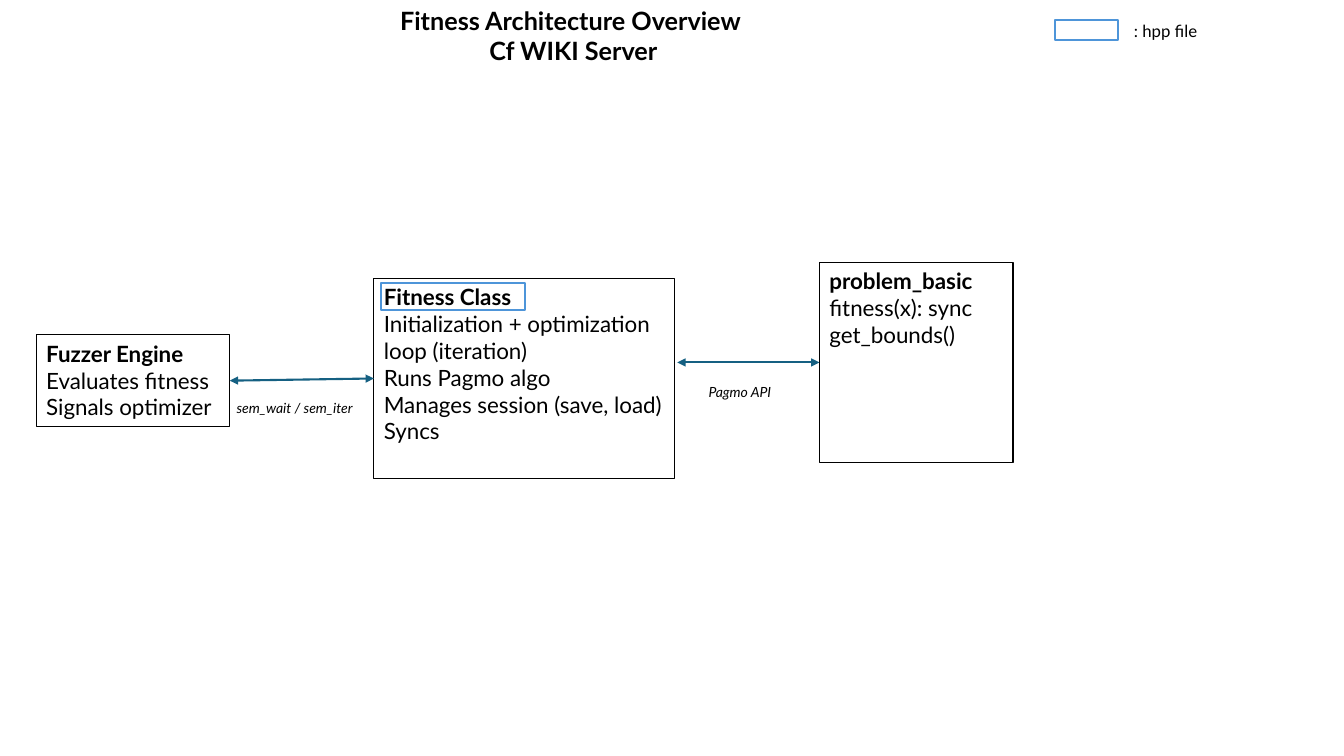
"""Draw the fitness architecture overview slide."""
import dataclasses
from typing import Optional

import lxml.etree
import pptx
import pptx.dml.color
import pptx.enum.shapes
import pptx.enum.text
import pptx.oxml.ns
import pptx.shapes.autoshape
import pptx.shapes.connector
import pptx.slide
import pptx.text.text
import pptx.util

Pt = pptx.util.Pt
ALIGN = pptx.enum.text.PP_ALIGN
BLACK, BLUE, TEAL = "000000", "4E95D9", "156082"
HEADING = {"size": Pt(16), "bold": True}
BODY = {"size": Pt(16), "bold": False}
TITLE = {"size": Pt(18), "bold": True}
CAPTION = {"size": Pt(10), "italic": True}
LEGEND = {"size": Pt(12)}
FRAME = {
    "word_wrap": True,
    "auto_size": pptx.enum.text.MSO_AUTO_SIZE.NONE,
    "vertical_anchor": pptx.enum.text.MSO_ANCHOR.TOP,
    "margin_left": Pt(7.2),
    "margin_right": Pt(7.2),
    "margin_top": Pt(3.6),
    "margin_bottom": Pt(3.6),
}


@dataclasses.dataclass(frozen=True)
class Run:
    text: str
    style: dict


@dataclasses.dataclass(frozen=True)
class Area:
    left: float
    top: float
    width: float
    height: float

    def lengths(self) -> tuple:
        return tuple(Pt(value) for value in dataclasses.astuple(self))


@dataclasses.dataclass(frozen=True)
class Box:
    area: Area
    paragraphs: tuple = ()
    outline: Optional[str] = None
    weight: float = 0.75


def color(value: str) -> pptx.dml.color.RGBColor:
    return pptx.dml.color.RGBColor.from_string(value)


def apply(target: object, values: dict) -> None:
    for name, value in values.items():
        setattr(target, name, value)


def write(frame: pptx.text.text.TextFrame, paragraphs: tuple, aligns: tuple = ()) -> None:
    apply(frame, FRAME)
    for index, runs in enumerate(paragraphs):
        paragraph = frame.add_paragraph() if index else frame.paragraphs[0]
        paragraph.alignment = aligns[index] if aligns else ALIGN.LEFT
        for item in runs:
            run = paragraph.add_run()
            run.text = item.text
            apply(run.font, {"name": "Lato", **item.style})
            run.font.color.rgb = color(BLACK)


def draw_box(slide: pptx.slide.Slide, box: Box) -> pptx.shapes.autoshape.Shape:
    if box.outline is None:
        shape = slide.shapes.add_textbox(*box.area.lengths())
    else:
        shape = slide.shapes.add_shape(
            pptx.enum.shapes.MSO_SHAPE.RECTANGLE, *box.area.lengths())
        shape.shadow.inherit = False
        shape.fill.background()
        shape.line.color.rgb = color(box.outline)
        shape.line.width = Pt(box.weight)
    if box.paragraphs:
        write(shape.text_frame, box.paragraphs)
    return shape


def draw_arrow(slide: pptx.slide.Slide, start: tuple, end: tuple) -> pptx.shapes.connector.Connector:
    arrow = slide.shapes.add_connector(
        pptx.enum.shapes.MSO_CONNECTOR.STRAIGHT, *map(Pt, start + end))
    arrow.line.color.rgb = color(TEAL)
    arrow.line.width = Pt(1.5)
    outline = arrow.line._get_or_add_ln()
    for tag in ("a:headEnd", "a:tailEnd"):
        lxml.etree.SubElement(outline, pptx.oxml.ns.qn(tag), type="triangle")
    lxml.etree.SubElement(arrow._element.spPr, pptx.oxml.ns.qn("a:effectLst"))
    return arrow


def component(area: Area, heading: str, *lines: str) -> Box:
    body = tuple((Run(line, BODY),) for line in lines)
    return Box(area, ((Run(heading, HEADING),),) + body, BLACK)


def label(area: Area, text: str, style: dict) -> Box:
    return Box(area, ((Run(text, style),),))


def main() -> None:
    deck = pptx.Presentation()
    deck.slide_width, deck.slide_height = Pt(960), Pt(540)
    slide = deck.slides.add_slide(deck.slide_layouts[5])

    title = slide.shapes.title
    apply(title, dict(zip(("left", "top", "width", "height"),
                          Area(278.6, 0, 262, 51).lengths())))
    write(title.text_frame,
          ((Run("Fitness Architecture Overview", TITLE),),
           (Run("Cf WIKI Server", TITLE),)),
          (ALIGN.LEFT, ALIGN.CENTER))

    draw_box(slide, Box(Area(753.7, 14.3, 45, 14.4), (), BLUE, 1.5))
    draw_box(slide, label(Area(802.8, 11.5, 59.8, 21.8), ": hpp file", LEGEND))
    fuzzer = draw_box(slide, component(
        Area(25.9, 239.2, 138.2, 65.4),
        "Fuzzer Engine", "Evaluates fitness", "Signals optimizer"))
    draw_box(slide, label(Area(162, 281.5, 110.2, 19.4), "sem_wait / sem_iter", CAPTION))
    fitness = draw_box(slide, component(
        Area(267.1, 198.7, 214.8, 143.3),
        "Fitness Class", "Initialization + optimization loop (iteration)",
        "Runs Pagmo algo", "Manages session (save, load)", "Syncs"))
    draw_box(slide, Box(Area(272.2, 202.3, 103, 19.4), (), BLUE, 1.5))
    semaphores = draw_arrow(slide, (164.1, 271.9), (267.1, 270.3))
    semaphores.begin_connect(fuzzer, 3)
    semaphores.end_connect(fitness, 1)
    draw_box(slide, label(Area(499, 270.7, 71.3, 19.4), "Pagmo API", CAPTION))
    draw_arrow(slide, (483.8, 258.9), (585.4, 258.9))
    draw_box(slide, Box(
        Area(585.4, 187.2, 138.2, 143.3),
        ((Run("problem_basic ", HEADING), Run("fitness(x): sync", BODY)),
         (Run("get_bounds()", BODY),)),
        BLACK))

    deck.save("out.pptx")


if __name__ == "__main__":
    main()
